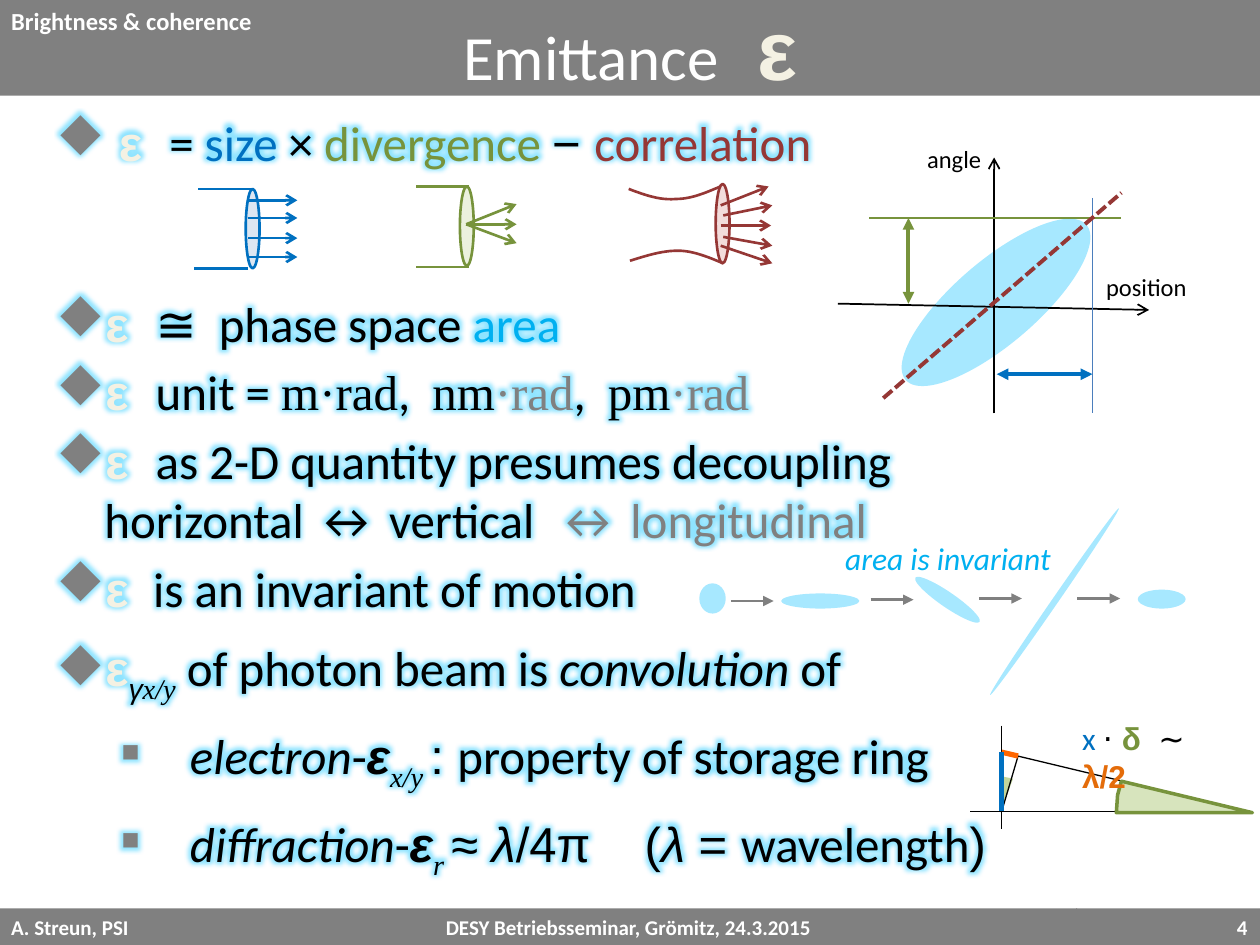
"""Build the slide on emittance with its beam and phase space sketches."""
from dataclasses import dataclass
from typing import NamedTuple

from lxml import etree
from pptx import Presentation
from pptx import util as u
from pptx.dml.color import RGBColor
from pptx.enum import dml, shapes, text
from pptx.oxml import parse_xml
from pptx.oxml.ns import qn

NS = 'xmlns:a="http://schemas.openxmlformats.org/drawingml/2006/main"'


@dataclass(frozen=True)
class Theme:
    grey: str = "808080"
    white: str = "FFFFFF"
    black: str = "000000"
    cream: str = "F4F1E3"
    blue: str = "0070C0"
    green: str = "77933C"
    red: str = "953735"
    sky: str = "00B0F0"
    pale: str = "A7E8FF"
    glow: str = "8FE4FF"
    body: int = 28
    title: int = 36
    large: int = 48
    note: int = 18
    label: int = 14
    foot: int = 12
    sans: str = "Calibri"
    plain: str = "Arial"
    serif: str = "Times New Roman"
    marks: str = "Wingdings"


T = Theme()


class Line(NamedTuple):
    ends: tuple
    ink: str
    width: float = 1.5
    head: str = ""
    tail: str = ""
    dash: bool = False


class Lens(NamedTuple):
    left: float
    top: float
    fill: str
    ink: str
    rays: tuple
    rims: tuple = ()


class Item(NamedTuple):
    runs: tuple
    gap: float = 5.6
    sub: bool = False


def cm(inch: float) -> u.Cm:
    return u.Cm(inch * 2.54)


def rgb(tint: str) -> RGBColor:
    return RGBColor.from_string(tint)


def put(par, words: str, *, size=T.body, tint=T.black, face=T.sans,
        bold=False, ital=False, low=False, glow=False) -> None:
    for i, part in enumerate(words.split("\n")):
        if i:
            par.add_line_break()
        run = par.add_run()
        run.text = part
        font = run.font
        font.size, font.name, font.bold, font.italic = u.Pt(size), face, bold, ital
        font.color.rgb = rgb(tint)
        props = run._r.get_or_add_rPr()
        if low:
            props.set("baseline", "-25000")
        if glow:
            props.find(qn("a:solidFill")).addnext(parse_xml(
                f'<a:effectLst {NS}><a:glow rad="139700">'
                f'<a:srgbClr val="{T.glow}"/></a:glow></a:effectLst>'))


def box(page, at: tuple, wrap=True):
    frame = page.shapes.add_textbox(*map(cm, at)).text_frame
    frame.word_wrap = wrap
    return frame


def paint(form, fill="", ink="", width=1.5) -> None:
    form.shadow.inherit = False
    if fill:
        form.fill.solid()
        form.fill.fore_color.rgb = rgb(fill)
    else:
        form.fill.background()
    if ink:
        form.line.color.rgb = rgb(ink)
        form.line.width = u.Pt(width)
    else:
        form.line.fill.background()


def shape(page, kind, at: tuple, fill: str, ink="", turn=0.0):
    form = page.shapes.add_shape(kind, *map(cm, at))
    form.rotation = turn
    paint(form, fill, ink)
    return form


def oval(page, at: tuple, fill: str, ink="", turn=0.0) -> None:
    shape(page, shapes.MSO_SHAPE.OVAL, at, fill, ink, turn)


def free(page, dots: list, fill="", ink="", width=1.5, close=False) -> None:
    first, *rest = [(cm(x), cm(y)) for x, y in dots]
    pen = page.shapes.build_freeform(*first)
    pen.add_line_segments(rest, close=close)
    paint(pen.convert_to_shape(), fill, ink, width)


def curve(knots: list, steps=12) -> list:
    dots = [knots[0]]
    for i in range(0, len(knots) - 1, 3):
        for n in range(1, steps + 1):
            t = n / steps
            mix = ((1 - t) ** 3, 3 * t * (1 - t) ** 2, 3 * t * t * (1 - t), t ** 3)
            dots.append(tuple(sum(m * k[axis] for m, k in zip(mix, knots[i:i + 4]))
                              for axis in (0, 1)))
    return dots


def stroke(page, line: Line) -> None:
    wire = page.shapes.add_connector(shapes.MSO_CONNECTOR.STRAIGHT, *map(cm, line.ends))
    wire.line.color.rgb = rgb(line.ink)
    wire.line.width = u.Pt(line.width)
    if line.dash:
        wire.line.dash_style = dml.MSO_LINE.SQUARE_DOT
    for tag, kind in (("a:headEnd", line.head), ("a:tailEnd", line.tail)):
        if kind:
            etree.SubElement(wire.line._get_or_add_ln(), qn(tag)).set("type", kind)
    etree.SubElement(wire._element.spPr, qn("a:effectLst"))


def bars(page) -> None:
    left, right = text.PP_ALIGN.LEFT, text.PP_ALIGN.RIGHT
    for x, wide, words, side in (
            (-0.01, 8.56, "A. Streun, PSI\tDESY Betriebsseminar, Grömitz, 24.3.2015", left),
            (8.54, 1.46, "4", right)):
        bar = shape(page, shapes.MSO_SHAPE.RECTANGLE, (x, 7.21, wide, 0.29), T.grey)
        bar.text_frame.vertical_anchor = text.MSO_ANCHOR.MIDDLE
        par = bar.text_frame.paragraphs[0]
        par.alignment = side
        par._p.get_or_add_pPr().append(parse_xml(
            f'<a:tabLst {NS}><a:tab pos="{cm(3.45)}" algn="l"/></a:tabLst>'))
        put(par, words, size=T.foot, tint=T.white, bold=True)


def title(page) -> None:
    head = page.shapes.title
    head.left, head.top, head.width, head.height = map(cm, (0, -0.02, 10, 0.78))
    head.fill.solid()
    head.fill.fore_color.rgb = rgb(T.grey)
    head.text_frame.vertical_anchor = text.MSO_ANCHOR.MIDDLE
    par = head.text_frame.paragraphs[0]
    par.alignment = text.PP_ALIGN.CENTER
    put(par, "Emittance", size=T.title, tint=T.white)
    put(par, "  ", size=T.large, tint=T.cream, bold=True)
    put(par, "ε", size=T.large, tint=T.cream, face=T.plain, bold=True)


def points(page) -> None:
    eps = dict(face=T.plain, tint=T.cream, bold=True)
    arial, times, grey = dict(face=T.plain), dict(face=T.serif), dict(tint=T.grey)
    slant = dict(ital=True)
    rad = ("·rad", times | grey)
    foot = times | dict(ital=True, low=True)
    strong = arial | dict(bold=True, ital=True)
    items = (
        Item(((" ε  ", eps), ("= ", {}), ("size ", dict(tint=T.blue)), ("× ", {}),
              ("divergence ", dict(tint=T.green)), ("− ", arial),
              ("correlation", dict(tint=T.red))), 0),
        Item((("ε  ", eps), ("≅  phase space ", {}), ("area", dict(tint=T.sky))), 70),
        Item((("ε  ", eps), ("unit = ", {}), ("m·rad", times), (",  ", {}),
              ("nm", times), rad, (",  ", {}), ("pm", times), rad)),
        Item((("ε  ", eps),
              ("as 2-D quantity presumes decoupling \nhorizontal ↔ vertical  ", {}),
              ("↔ longitudinal", grey))),
        Item((("ε ", eps), (" is an invariant of motion", {}))),
        Item((("ε", eps), ("γ", foot | arial), ("x/y", foot), (" of photon beam is ", {}),
              ("convolution", slant), (" of", {})), 12),
        Item((("electron", slant), ("-", {}), ("ε", strong), ("x/y ", foot),
              (": ", arial), ("property of storage ring", {})), 12, True),
        Item((("diffraction", slant), ("-", {}), ("ε", strong), ("r ", foot),
              ("≈ ", arial), ("λ", arial | slant), ("/4π    (", arial),
              ("λ", arial | slant), (" = ", arial), ("wavelength", {}), (")", arial)),
             12, True))
    frame = box(page, (0.35, 0.84, 9.37, 6.06))
    for i, item in enumerate(items):
        par = frame.add_paragraph() if i else frame.paragraphs[0]
        edge, back, mark = (1.06, 0.56, "§") if item.sub else (0.38, 0.38, "u")
        props = par._p.get_or_add_pPr()
        props.set("marL", str(cm(edge)))
        props.set("indent", str(-cm(back)))
        for xml in (f'<a:buClr {NS}><a:srgbClr val="{T.grey}"/></a:buClr>',
                    f'<a:buFont {NS} typeface="{T.marks}" pitchFamily="2" charset="2"/>',
                    f'<a:buChar {NS} char="{mark}"/>'):
            props.append(parse_xml(xml))
        par.space_before = u.Pt(item.gap)
        for words, form in item.runs:
            put(par, words, glow=True, **form)


def beams(page) -> None:
    for lens in (
            Lens(1.95, 1.5, "DCE6F2", T.blue,
                 tuple((1.97, y, 2.36, y) for y in (1.59, 1.73, 1.89, 2.04)),
                 ((2, 1.5, 1.57, 1.5), (1.97, 2.13, 1.54, 2.13))),
            Lens(3.65, 1.48, "EBF1DE", T.green,
                 tuple((3.7, 1.78, 4.1, y) for y in (1.62, 1.78, 1.93)),
                 tuple((3.72, y, 3.3, y) for y in (1.48, 2.12))),
            Lens(5.68, 1.46, "F2DCDB", T.red,
                 ((5.72, 1.63, 6.1, 1.48), (5.74, 1.71, 6.13, 1.63),
                  (5.72, 1.79, 6.12, 1.79), (5.74, 1.88, 6.13, 1.95),
                  (5.72, 1.95, 6.13, 2.09)))):
        oval(page, (lens.left, lens.top, 0.11, 0.63), lens.fill, lens.ink)
        for ends in lens.rays:
            stroke(page, Line(ends, lens.ink, tail="arrow"))
        for ends in lens.rims:
            stroke(page, Line(ends, lens.ink))
    for knots in (
            [(5.72, 1.48), (5.6, 1.53), (5.49, 1.58), (5.36, 1.58),
             (5.24, 1.59), (5.12, 1.55), (4.99, 1.5)],
            [(5.74, 2.09), (5.62, 2.04), (5.5, 1.99), (5.38, 1.99),
             (5.25, 1.99), (5.13, 2.03), (5, 2.07)]):
        free(page, curve(knots), ink=T.red)


def phase(page) -> None:
    oval(page, (6.96, 2.07, 1.89, 0.66), T.pale, turn=319.4)
    for words, at, wrap in (("angle", (7.26, 1.09, 0.91, 0.51), False),
                            ("position", (8.68, 2.11, 1.05, 0.41), True)):
        put(box(page, at, wrap).paragraphs[0], words, size=T.label)
    for line in (
            Line((6.65, 2.41, 9.12, 2.46), T.black, 1, tail="arrow"),
            Line((7.89, 3.28, 7.89, 1.25), T.black, 1, tail="arrow"),
            Line((8.67, 1.57, 8.67, 3.28), "4B7EBC", 1),
            Line((6.9, 1.73, 8.9, 1.73), T.green, 1),
            Line((7.21, 1.73, 7.21, 2.41), T.green, 2.25, "triangle", "triangle"),
            Line((7.91, 2.97, 8.67, 2.97), T.blue, 2.25, "triangle", "triangle"),
            Line((7.01, 3.16, 8.9, 1.53), T.red, 2.25, dash=True)):
        stroke(page, line)


def wedge(page) -> None:
    free(page, [(7.94, 6.45), (7.94, 6.16), (8.04, 6.18)], "C3D69B", close=True)
    for ends in ((7.7, 6.44, 9.91, 6.44), (9.91, 6.44, 7.95, 5.97),
                 (7.95, 5.76, 7.95, 6.58), (7.95, 6.44, 8.08, 6)):
        stroke(page, Line(ends, T.black, 0.75))
    free(page, [(8.9, 6.2), (8.87, 6.31), (8.86, 6.45), (9.94, 6.45)],
         "D7E4BD", T.green, 2, True)
    stroke(page, Line((7.95, 5.97, 8.08, 6), "FF6600", 3))
    par = box(page, (8.49, 5.66, 1.29, 0.4)).paragraphs[0]
    put(par, "x ", size=T.note, tint=T.blue)
    for words, tint, bold in (("⋅ ", T.black, False), ("δ ", T.green, True),
                              (" ∼ ", T.black, False), ("λ/2", "E46C0A", True)):
        put(par, words, size=T.note, tint=tint, face=T.plain, bold=bold)
    stroke(page, Line((7.95, 5.97, 7.95, 6.44), T.blue, 3))


def motion(page) -> None:
    for at, turn in (((5.55, 4.63, 0.21, 0.24), 0), ((6.2, 4.71, 0.62, 0.12), 0),
                     ((7.21, 4.7, 0.62, 0.12), 34.5), ((7.47, 4.75, 1.8, 0.05), 304.6),
                     ((9.03, 4.68, 0.38, 0.15), 0)):
        oval(page, at, T.pale, turn=turn)
    put(box(page, (6.61, 4.23, 3.1, 0.4)).paragraphs[0], "area is invariant",
        size=T.note, tint=T.sky, ital=True)
    for x, y in ((5.8, 4.77), (6.91, 4.76), (7.77, 4.75), (8.55, 4.75)):
        stroke(page, Line((x, y, x + 0.34, y), T.grey, tail="triangle"))


def main() -> None:
    deck = Presentation()
    deck.slide_width, deck.slide_height = cm(10), cm(7.5)
    page = deck.slides.add_slide(deck.slide_layouts[5])
    for draw in (bars, title, points, beams, phase, wedge, motion):
        draw(page)
    put(box(page, (-0.01, 0, 2.13, 0.34), False).paragraphs[0],
        "Brightness & coherence", size=T.label, tint=T.white, bold=True)
    deck.save("out.pptx")


if __name__ == "__main__":
    main()
